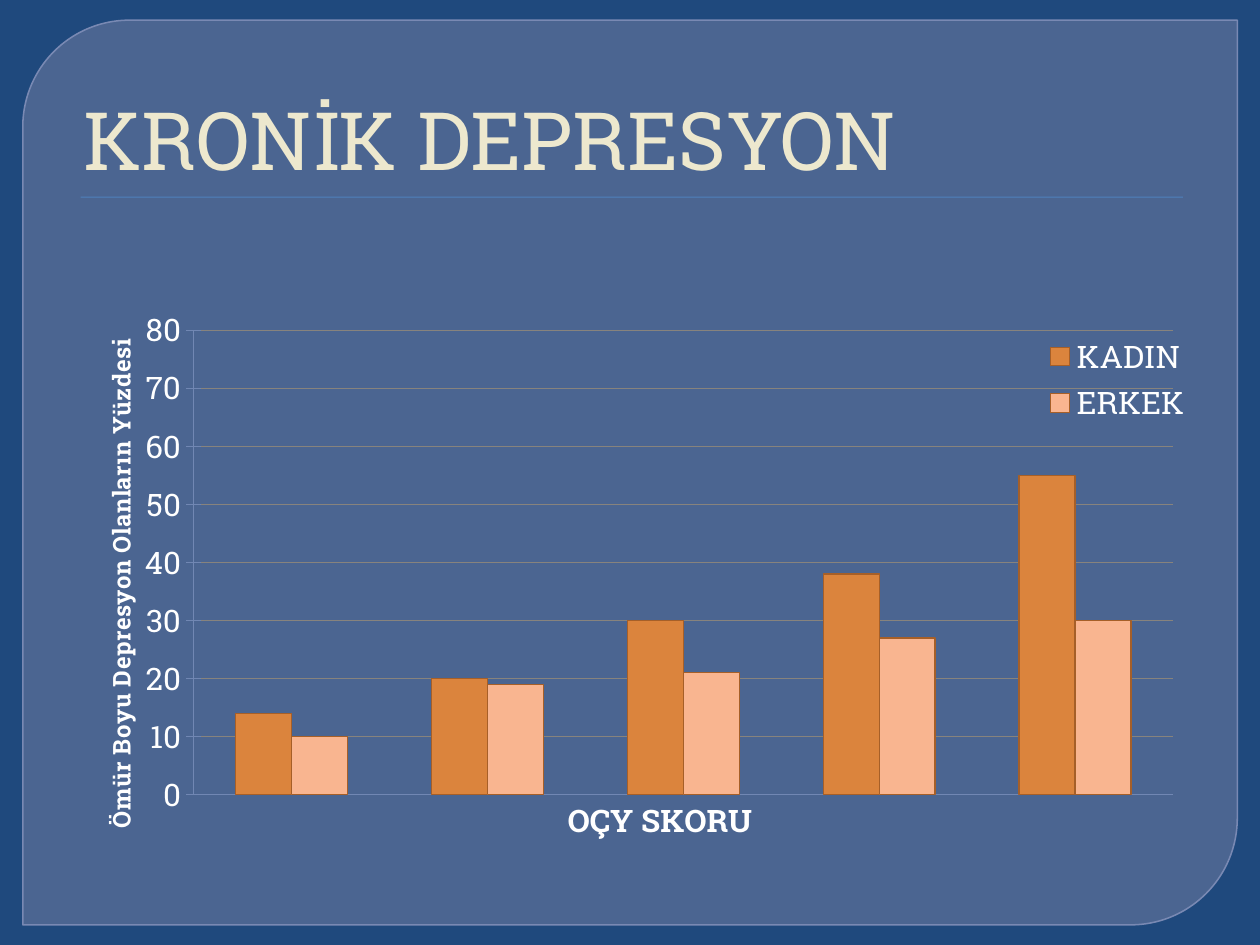
from lxml.etree import SubElement
from pptx import Presentation
from pptx.chart.data import CategoryChartData
from pptx.dml.color import RGBColor
from pptx.enum.chart import XL_CHART_TYPE, XL_LEGEND_POSITION, XL_TICK_LABEL_POSITION, XL_TICK_MARK
from pptx.enum.shapes import MSO_SHAPE
from pptx.enum.text import MSO_ANCHOR, PP_ALIGN
from pptx.oxml import parse_xml
from pptx.oxml.ns import nsdecls, qn
from pptx.util import Pt


def color(value):
    return RGBColor.from_string(value)


def set_opacity(color_format_fill, percent):
    for element in color_format_fill.iter(qn("a:srgbClr")):
        SubElement(element, qn("a:alpha")).set("val", str(percent * 1000))


def place(element, index, inner=False, **position):
    for layout in element.findall(qn("c:layout")):
        element.remove(layout)
    target = '<c:layoutTarget val="inner"/>' if inner else ""
    modes = "".join(f'<c:{key}Mode val="edge"/>' for key in "xy")
    values = "".join(f'<c:{key} val="{value}"/>' for key, value in position.items())
    layout = parse_xml(
        f'<c:layout {nsdecls("c")}><c:manualLayout>{target}{modes}{values}</c:manualLayout></c:layout>'
    )
    element.insert(index, layout)


class SlideBuilder:
    """Holds the style and the current slide."""

    font_name = "Roboto Slab"
    text_color = "FFFFFF"
    title_color = "EDE8CE"
    grid_color = "87837D"
    axis_color = "7187B3"
    bar_line_color = "A65F28"

    def __init__(self, presentation, background):
        self.slide = presentation.slides.add_slide(presentation.slide_layouts[5])
        self.slide.background.fill.solid()
        self.slide.background.fill.fore_color.rgb = color(background)

    def style_font(self, font, size, value, bold=False):
        font.name = self.font_name
        font.size = Pt(size)
        font.bold = bold
        font.color.rgb = color(value)

    def add_block(self, kind, box, fill):
        shape = self.slide.shapes.add_shape(kind, *map(Pt, box))
        shape.shadow.inherit = False
        shape.fill.solid()
        shape.fill.fore_color.rgb = color(fill)
        shape.line.fill.background()
        return shape

    def add_panel(self, box, fill, line):
        panel = self.add_block(MSO_SHAPE.ROUND_2_DIAG_RECTANGLE, box, fill)
        panel.adjustments[0] = 0.118
        panel.adjustments[1] = 0
        set_opacity(panel.element.spPr, 65)
        panel.line.color.rgb = color(line)
        panel.line.width = Pt(0.87)

    def add_title(self, text, box):
        title = self.slide.shapes.title
        title.element.getparent().append(title.element)
        title.left, title.top, title.width, title.height = map(Pt, box)
        frame = title.text_frame
        frame.text = text
        frame.vertical_anchor = MSO_ANCHOR.BOTTOM
        paragraph = frame.paragraphs[0]
        paragraph.alignment = PP_ALIGN.LEFT
        paragraph._p.get_or_add_pPr().set("marL", str(Pt(4.3)))
        self.style_font(paragraph.runs[0].font, 46, self.title_color)

    def add_axis_title(self, axis, text, size, x, y):
        axis.has_title = True
        frame = axis.axis_title.text_frame
        frame.text = text
        self.style_font(frame.paragraphs[0].runs[0].font, size, self.text_color, True)
        place(axis.axis_title._element, 1, x=x, y=y)

    def add_column_chart(self, box, categories, series):
        data = CategoryChartData()
        data.categories = categories
        for name, values, _ in series:
            data.add_series(name, values)
        chart = self.slide.shapes.add_chart(
            XL_CHART_TYPE.COLUMN_CLUSTERED, *map(Pt, box), data
        ).chart
        chart.has_title = False
        self.style_font(chart.font, 18, self.text_color)
        plot = chart.plots[0]
        plot.gap_width = 150
        plot.overlap = 0
        plot.vary_by_categories = False
        for bars, (_, _, fill) in zip(plot.series, series):
            bars.format.fill.solid()
            bars.format.fill.fore_color.rgb = color(fill)
            bars.format.line.color.rgb = color(self.bar_line_color)
            bars.format.line.width = Pt(0.75)
        self.style_axes(chart)
        chart.has_legend = True
        chart.legend.position = XL_LEGEND_POSITION.RIGHT
        chart.legend.include_in_layout = False
        self.style_font(chart.legend.font, 18, self.text_color)
        place(chart.legend._element, 1, x=0.86, y=0.17, w=0.14, h=0.16)
        plot_area = chart._chartSpace.chart.plotArea
        place(plot_area, 0, True, x=0.115, y=0.169, w=0.864, h=0.758)
        return chart

    def style_axes(self, chart):
        for axis in (chart.category_axis, chart.value_axis):
            axis.format.line.color.rgb = color(self.axis_color)
            axis.format.line.width = Pt(0.75)
            axis.minor_tick_mark = XL_TICK_MARK.NONE
        chart.category_axis.major_tick_mark = XL_TICK_MARK.NONE
        chart.category_axis.tick_label_position = XL_TICK_LABEL_POSITION.NONE
        value_axis = chart.value_axis
        value_axis.major_tick_mark = XL_TICK_MARK.CROSS
        value_axis.minimum_scale = 0
        value_axis.maximum_scale = 80
        value_axis.major_unit = 10
        value_axis.has_major_gridlines = True
        value_axis.major_gridlines.format.line.color.rgb = color(self.grid_color)
        value_axis.major_gridlines.format.line.width = Pt(0.75)


def main():
    presentation = Presentation()
    presentation.slide_width = Pt(720)
    presentation.slide_height = Pt(540)
    builder = SlideBuilder(presentation, "1F497D")
    builder.add_panel((13, 11.5, 694, 517), "63759D", "7989B3")
    builder.add_block(MSO_SHAPE.RECTANGLE, (46, 112.3, 630, 0.7), "4F81BD")
    builder.add_title("KRONİK DEPRESYON", (36, 20, 648, 90))
    chart = builder.add_column_chart(
        (36, 129.6, 648, 356.4),
        ["1", "2", "3", "4", "5"],
        [
            ("KADIN", (14, 20, 30, 38, 55), "DB843D"),
            ("ERKEK", (10, 19, 21, 27, 30), "F9B590"),
        ],
    )
    builder.add_axis_title(chart.category_axis, "OÇY SKORU", 18, 0.44, 0.92)
    builder.add_axis_title(
        chart.value_axis, "Ömür Boyu Depresyon Olanların Yüzdesi", 14, 0.03, 0.19
    )
    presentation.save("out.pptx")


if __name__ == "__main__":
    main()
